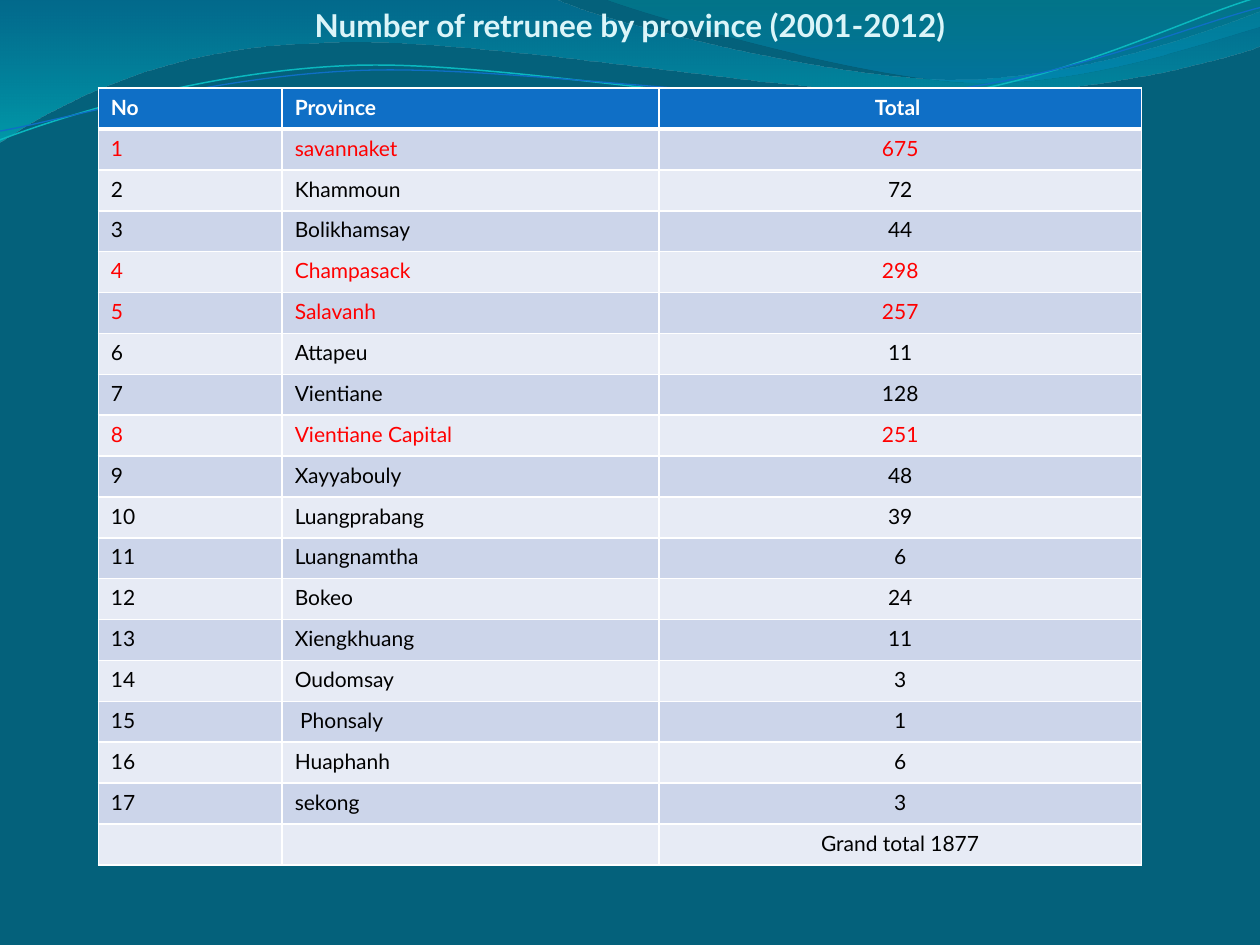
from math import cos, radians, sin

from lxml import etree
from pptx import Presentation
from pptx.dml.color import RGBColor
from pptx.enum.text import MSO_ANCHOR, PP_ALIGN
from pptx.oxml.ns import qn
from pptx.util import Inches, Pt

CENTER = PP_ALIGN.CENTER
LEFT = PP_ALIGN.LEFT
TOP = MSO_ANCHOR.TOP
FONT = "Lato"
BODY_SIZE = 12
LINE_TILT = 2.7
COLORS = {
    "background": "04617B",
    "title": "DBF5F9",
    "header": "0F6FC6",
    "odd_row": "CCD5EA",
    "even_row": "E7EBF5",
    "white": "FFFFFF",
    "text": "000000",
    "highlight": "FF0000",
    "wave_top": "0074A1",
    "wave_bottom": "00C6CF",
    "crest_top": "00A1A9",
    "crest_bottom": "008BBF",
    "teal_line": "0AB8BF",
    "blue_line": "0F6FC6",
}

HEADINGS = ["No", "Province", "Total "]
COLUMN_WIDTHS = [1.46, 2.99, 3.83]
ALIGNMENTS = [LEFT, LEFT, CENTER]
ROW_HEIGHT = 6.17 / 19
RETURNEES = [
    ("savannaket", 675), ("Khammoun", 72), ("Bolikhamsay", 44),
    ("Champasack", 298), ("Salavanh", 257), ("Attapeu", 11),
    ("Vientiane", 128), ("Vientiane Capital", 251), ("Xayyabouly", 48),
    ("Luangprabang", 39), ("Luangnamtha", 6), ("Bokeo", 24),
    ("Xiengkhuang", 11), ("Oudomsay", 3), (" Phonsaly", 1),
    ("Huaphanh", 6), ("sekong", 3),
]
HIGHLIGHT_FROM = 200

WAVE = [
    (0, 0), (4.4, -0.01),
    (4.76, 0.17, 6.64, 0.63, 7.58, 0.63), (8.53, 0.63, 9.58, 0.26, 10, 0.09),
    (10.01, 0.36),
    (9.83, 0.44, 8.7, 0.76, 7.46, 0.75), (6.22, 0.75, 3.82, 0.28, 2.57, 0.34),
    (1.29, 0.36, 0.46, 0.83, -0.01, 1.13), (0, 0),
]
CREST = [
    (4.79, -0.01),
    (5.09, 0.11, 6.82, 0.62, 7.69, 0.65), (8.56, 0.69, 9.61, 0.32, 10, 0.21),
    (10, 0), (4.79, -0.01),
]
TEAL_LINE = [
    (0, 1.11),
    (0.48, 0.93, 1.58, 0.57, 2.77, 0.52), (3.95, 0.47, 5.93, 0.89, 7.13, 0.8),
    (8.33, 0.71, 9.38, 0.15, 9.98, -0.02),
]
TEAL_CENTER = (4.99, 0.575)
BLUE_LINE = [
    (0, 1.04),
    (0.47, 0.96, 1.64, 0.61, 2.83, 0.56), (4.03, 0.51, 5.97, 0.84, 7.17, 0.75),
    (8.36, 0.67, 9.41, 0.21, 10, 0.06),
]
BLUE_CENTER = (4.995, 0.59)


def rgb(name):
    return RGBColor.from_string(COLORS[name])


def level(outline, center):
    turn_cos, turn_sin = cos(radians(LINE_TILT)), sin(radians(LINE_TILT))
    leveled = []
    for step in outline:
        turned = []
        for x, y in zip(step[::2], step[1::2]):
            dx, dy = x - center[0], y - center[1]
            turned += [center[0] + dx * turn_cos - dy * turn_sin,
                       center[1] + dx * turn_sin + dy * turn_cos]
        leveled.append(tuple(turned))
    return leveled


def add_outline(shapes, outline, close):
    points = [(Inches(x), Inches(y)) for step in outline
              for x, y in zip(step[::2], step[1::2])]
    builder = shapes.build_freeform(*points[0])
    builder.add_line_segments(points[1:], close=close)
    shape = builder.convert_to_shape()
    shape.shadow.inherit = False
    segments = iter(list(shape.element.iter(qn("a:lnTo"))))
    for step in outline[1:]:
        segment = next(segments)
        if len(step) == 6:
            segment_parts = [segment, next(segments), next(segments)]
            curve = etree.Element(qn("a:cubicBezTo"))
            segment.addprevious(curve)
            for part in segment_parts:
                curve.append(part[0])
                part.getparent().remove(part)
    return shape


def add_wave(slide, outline, stops):
    wave = add_outline(slide.shapes, outline, True)
    wave.line.fill.background()
    wave.fill.gradient()
    wave.fill.gradient_angle = 270
    for stop, (position, color, opacity) in zip(wave.fill.gradient_stops, stops):
        stop.position = position
        stop.color.rgb = rgb(color)
    for element, (_, _, opacity) in zip(wave.element.iter(qn("a:srgbClr")), stops):
        etree.SubElement(element, qn("a:alpha"), val=str(opacity * 1000))


def add_wave_line(group, outline, center, color, width):
    wave_line = add_outline(group.shapes, level(outline, center), False)
    wave_line.rotation = 360 - LINE_TILT
    wave_line.fill.background()
    wave_line.line.color.rgb = rgb(color)
    wave_line.line.width = Pt(width)


def add_run(paragraph, text, size, color, bold=False):
    run = paragraph.add_run()
    run.text = text
    run.font.name = FONT
    run.font.size = Pt(size)
    run.font.bold = bold
    run.font.color.rgb = rgb(color)


def add_title(slide, text):
    title = slide.shapes.add_textbox(0, 0, Inches(10), Inches(0.55))
    frame = title.text_frame
    frame.word_wrap = True
    frame.vertical_anchor = TOP
    frame.margin_left = frame.margin_right = frame.margin_bottom = 0
    frame.margin_top = Inches(0.05)
    frame.paragraphs[0].alignment = CENTER
    add_run(frame.paragraphs[0], text, 18, "title", True)


def set_borders(cell, top, bottom):
    properties = cell._tc.get_or_add_tcPr()
    for side, width in (("L", 1), ("R", 1), ("T", top), ("B", bottom)):
        border = etree.SubElement(properties, qn(f"a:ln{side}"), w=str(Pt(width)))
        fill = etree.SubElement(border, qn("a:solidFill"))
        etree.SubElement(fill, qn("a:srgbClr"), val=COLORS["white"])


def fill_cell(cell, text, alignment, fill, color, bold, borders):
    set_borders(cell, *borders)
    cell.fill.solid()
    cell.fill.fore_color.rgb = rgb(fill)
    paragraph = cell.text_frame.paragraphs[0]
    paragraph.alignment = alignment
    if text:
        add_run(paragraph, text, BODY_SIZE, color, bold)
    else:
        etree.SubElement(paragraph._p, qn("a:endParaRPr"), sz=str(BODY_SIZE * 100))


def add_province_table(slide):
    rows = [HEADINGS]
    rows += [(str(number), province, str(total))
             for number, (province, total) in enumerate(RETURNEES, 1)]
    rows.append(("", "", f"Grand total {sum(total for _, total in RETURNEES)}"))
    highlighted = {number for number, (_, total) in enumerate(RETURNEES, 1)
                   if total > HIGHLIGHT_FROM}
    table = slide.shapes.add_table(
        len(rows), len(HEADINGS), Inches(0.78), Inches(0.7),
        Inches(sum(COLUMN_WIDTHS)), Inches(ROW_HEIGHT * len(rows))).table
    for column, width in zip(table.columns, COLUMN_WIDTHS):
        column.width = Inches(width)
    for r, texts in enumerate(rows):
        table.rows[r].height = Inches(ROW_HEIGHT)
        header = r == 0
        fill = "header" if header else "odd_row" if r % 2 else "even_row"
        color = "white" if header else "highlight" if r in highlighted else "text"
        borders = (3 if r == 1 else 1, 3 if header else 1)
        for c, text in enumerate(texts):
            fill_cell(table.cell(r, c), text, ALIGNMENTS[c], fill, color, header, borders)


def main():
    deck = Presentation()
    deck.slide_width, deck.slide_height = Inches(10), Inches(7.5)
    slide = deck.slides.add_slide(deck.slide_layouts[6])
    slide.background.fill.solid()
    slide.background.fill.fore_color.rgb = rgb("background")
    add_wave(slide, WAVE, [(0, "wave_top", 45), (1, "wave_bottom", 55)])
    add_wave(slide, CREST, [(0, "crest_top", 30), (0.8, "crest_bottom", 45)])
    wave_lines = slide.shapes.add_group_shape()
    add_wave_line(wave_lines, TEAL_LINE, TEAL_CENTER, "teal_line", 0.85)
    add_wave_line(wave_lines, BLUE_LINE, BLUE_CENTER, "blue_line", 0.75)
    add_title(slide, "Number of retrunee by province (2001-2012)")
    add_province_table(slide)
    deck.save("out.pptx")


if __name__ == "__main__":
    main()
